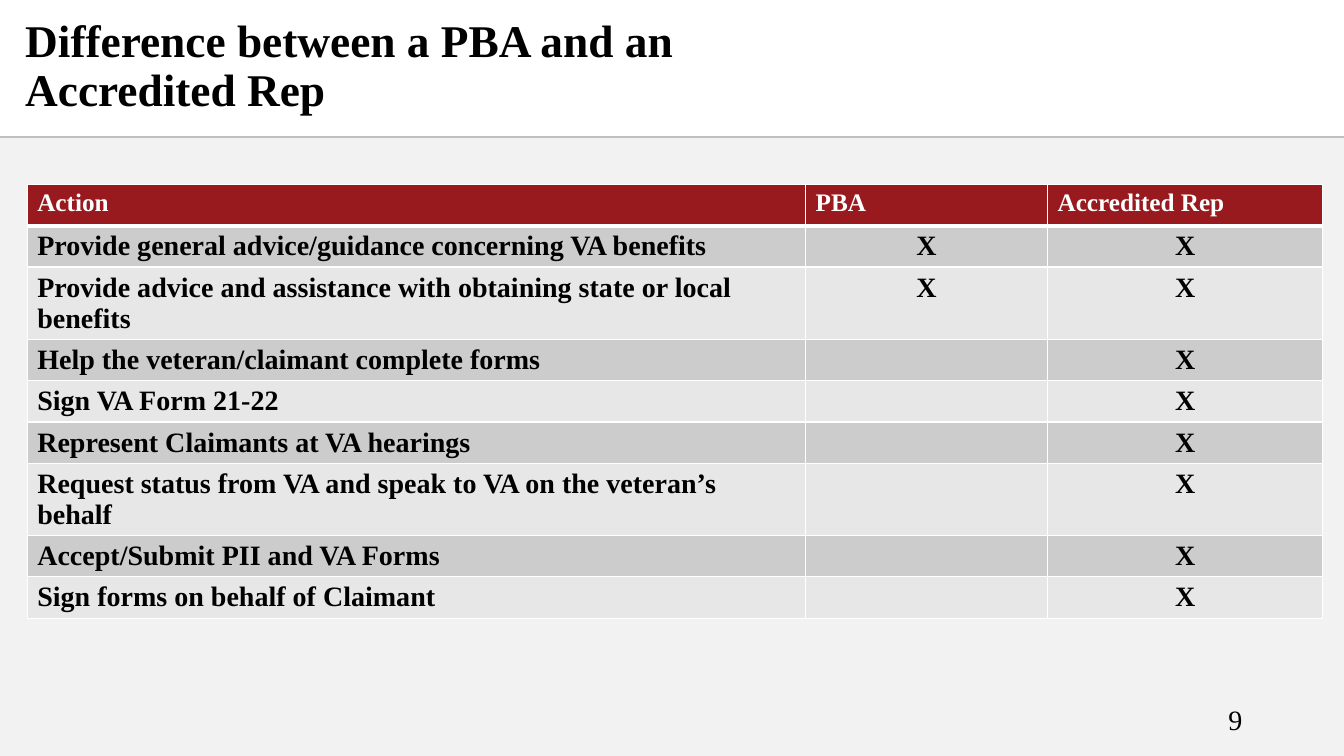
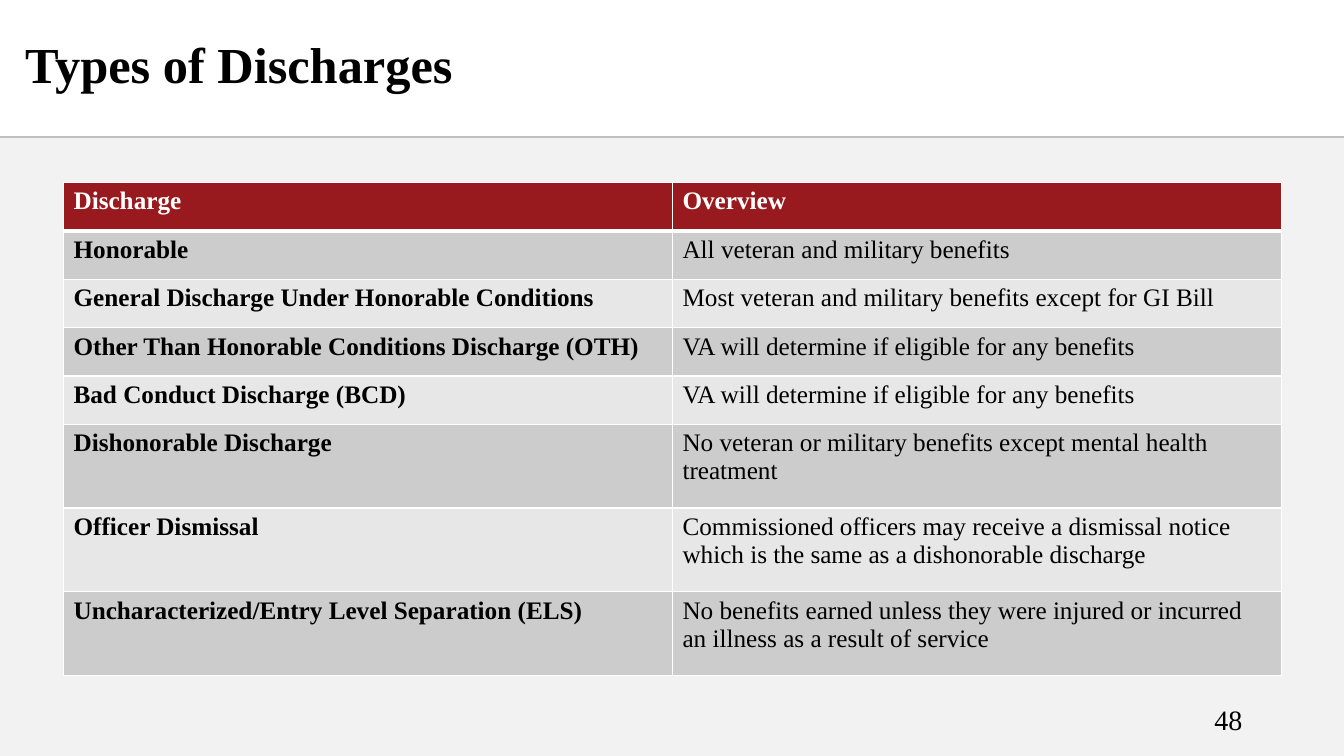
from lxml import etree
from pptx import Presentation
from pptx.dml.color import RGBColor
from pptx.enum import shapes, text
from pptx.oxml import ns
from pptx.util import Inches, Pt

COLORS = {
    "panel": "F2F2F2", "rule": "BFBFBF", "header": "991A1E",
    "band_dark": "CCCCCC", "band_light": "E7E7E7",
    "white": "FFFFFF", "black": "000000",
}
FONT = "Times New Roman"
SLIDE_W, SLIDE_H = 13.33, 7.5
RULE_Y = 1.36
PANEL_Y = 1.37
TITLE_ONLY = 5
LEFT, CENTER, RIGHT = (text.PP_ALIGN.LEFT, text.PP_ALIGN.CENTER,
                       text.PP_ALIGN.RIGHT)


def rgb(name):
    return RGBColor.from_string(COLORS[name])


def inches(*lengths):
    return [Inches(length) for length in lengths]


def write(frame, words, size, color="black", bold=False, align=LEFT):
    """Put one paragraph in a frame and format its runs."""
    frame.text = words
    paragraph = frame.paragraphs[0]
    paragraph.alignment = align
    for run in paragraph.runs:
        run.font.name = FONT
        run.font.size = Pt(size)
        run.font.bold = bold
        run.font.color.rgb = rgb(color)
    return paragraph


# Parts that every slide shares
def add_backdrop(slide):
    panel = slide.shapes.add_shape(
        shapes.MSO_SHAPE.RECTANGLE,
        *inches(0, PANEL_Y, SLIDE_W, SLIDE_H - PANEL_Y))
    panel.shadow.inherit = False
    panel.fill.solid()
    panel.fill.fore_color.rgb = rgb("panel")
    panel.line.fill.background()

    rule = slide.shapes.add_connector(
        shapes.MSO_CONNECTOR.STRAIGHT, *inches(0, RULE_Y, SLIDE_W, RULE_Y))
    rule.line.color.rgb = rgb("rule")
    rule.line.width = Pt(1.5)
    etree.SubElement(rule._element.spPr, ns.qn("a:effectLst"))


def add_title(slide, words, size, width):
    title = slide.shapes.title
    title.left, title.top, title.width, title.height = inches(
        0.15, 0.09, width, 1.16)
    frame = title.text_frame
    frame.word_wrap = True
    frame.auto_size = text.MSO_AUTO_SIZE.NONE
    frame.vertical_anchor = text.MSO_ANCHOR.MIDDLE
    write(frame, words, size, bold=True).line_spacing = 0.9


def add_page_number(slide, number):
    box = slide.shapes.add_textbox(*inches(9.42, 6.94, 3, 0.4))
    frame = box.text_frame
    frame.word_wrap = True
    frame.vertical_anchor = text.MSO_ANCHOR.MIDDLE
    write(frame, str(number), 20, align=RIGHT)


# Tables
def set_borders(cell, top=1, bottom=1):
    """White cell edges; the edge lines must come before the cell fill."""
    properties = cell._tc.get_or_add_tcPr()
    edges = {"lnL": 1, "lnR": 1, "lnT": top, "lnB": bottom}
    for position, (edge, points) in enumerate(edges.items()):
        line = etree.Element(ns.qn(f"a:{edge}"), w=str(Pt(points)))
        fill = etree.SubElement(line, ns.qn("a:solidFill"))
        etree.SubElement(fill, ns.qn("a:srgbClr"), val=COLORS["white"])
        properties.insert(position, line)


def add_banded_table(slide, left, top, widths, heights, rows, styles):
    """Red header row, then grey bands; styles holds one dict per column."""
    table = slide.shapes.add_table(
        len(rows), len(widths),
        *inches(left, top, sum(widths), sum(heights))).table
    for column, width in zip(table.columns, widths):
        column.width = Inches(width)
    for r, (row, height) in enumerate(zip(rows, heights)):
        table.rows[r].height = Inches(height)
        band = "header" if r == 0 else ("band_light", "band_dark")[r % 2]
        for c, words in enumerate(row):
            cell = table.cell(r, c)
            cell.fill.solid()
            cell.fill.fore_color.rgb = rgb(band)
            set_borders(cell, top=3 if r == 1 else 1, bottom=3 if r == 0 else 1)
            if r == 0:
                write(cell.text_frame, words, 18, "white", bold=True)
            elif words:
                write(cell.text_frame, words, **styles[c])


def add_table_slide(deck, title, number, table):
    slide = deck.slides.add_slide(deck.slide_layouts[TITLE_ONLY])
    add_backdrop(slide)
    add_title(slide, **title)
    add_banded_table(slide, **table)
    add_page_number(slide, number)


# Content
ACTION_ROWS = [
    ("Action", "PBA", "Accredited Rep"),
    ("Provide general advice/guidance concerning VA benefits", "X", "X"),
    ("Provide advice and assistance with obtaining state or local benefits",
     "X", "X"),
    ("Help the veteran/claimant complete forms", "", "X"),
    ("Sign VA Form 21-22", "", "X"),
    ("Represent Claimants at VA hearings", "", "X"),
    ("Request status from VA and speak to VA on the veteran’s behalf",
     "", "X"),
    ("Accept/Submit PII and VA Forms", "", "X"),
    ("Sign forms on behalf of Claimant", "", "X"),
]
DISCHARGE_ROWS = [
    ("Discharge", "Overview"),
    ("Honorable", "All veteran and military benefits"),
    ("General Discharge Under Honorable Conditions",
     "Most veteran and military benefits except for GI Bill"),
    ("Other Than Honorable Conditions Discharge (OTH)",
     "VA will determine if eligible for any benefits"),
    ("Bad Conduct Discharge (BCD)",
     "VA will determine if eligible for any benefits"),
    ("Dishonorable Discharge",
     "No veteran or military benefits except mental health treatment"),
    ("Officer Dismissal",
     "Commissioned officers may receive a dismissal notice which is the same "
     "as a dishonorable discharge"),
    ("Uncharacterized/Entry Level Separation (ELS)",
     "No benefits earned unless they were injured or incurred an illness as "
     "a result of service"),
]


def main():
    deck = Presentation()
    deck.slide_width, deck.slide_height = inches(SLIDE_W, SLIDE_H)

    action = dict(size=20, bold=True)
    mark = dict(action, align=CENTER)
    one_line, two_lines = 0.41, 0.71
    add_table_slide(
        deck,
        title=dict(words="Difference between a PBA and an\vAccredited Rep",
                   size=32.4, width=10.89),
        number=9,
        table=dict(left=0.27, top=1.83, widths=[7.72, 2.4, 2.73],
                   heights=[two_lines if r in (2, 6) else one_line
                            for r in range(len(ACTION_ROWS))],
                   rows=ACTION_ROWS, styles=[action, mark, mark]))

    add_table_slide(
        deck,
        title=dict(words="Types of Discharges", size=36, width=8.25),
        number=48,
        table=dict(left=0.63, top=1.81, widths=[6.04] * 2,
                   heights=[0.48] * 5 + [0.83] * 3, rows=DISCHARGE_ROWS,
                   styles=[dict(size=18, bold=True), dict(size=18)]))

    deck.save("out.pptx")


if __name__ == "__main__":
    main()
